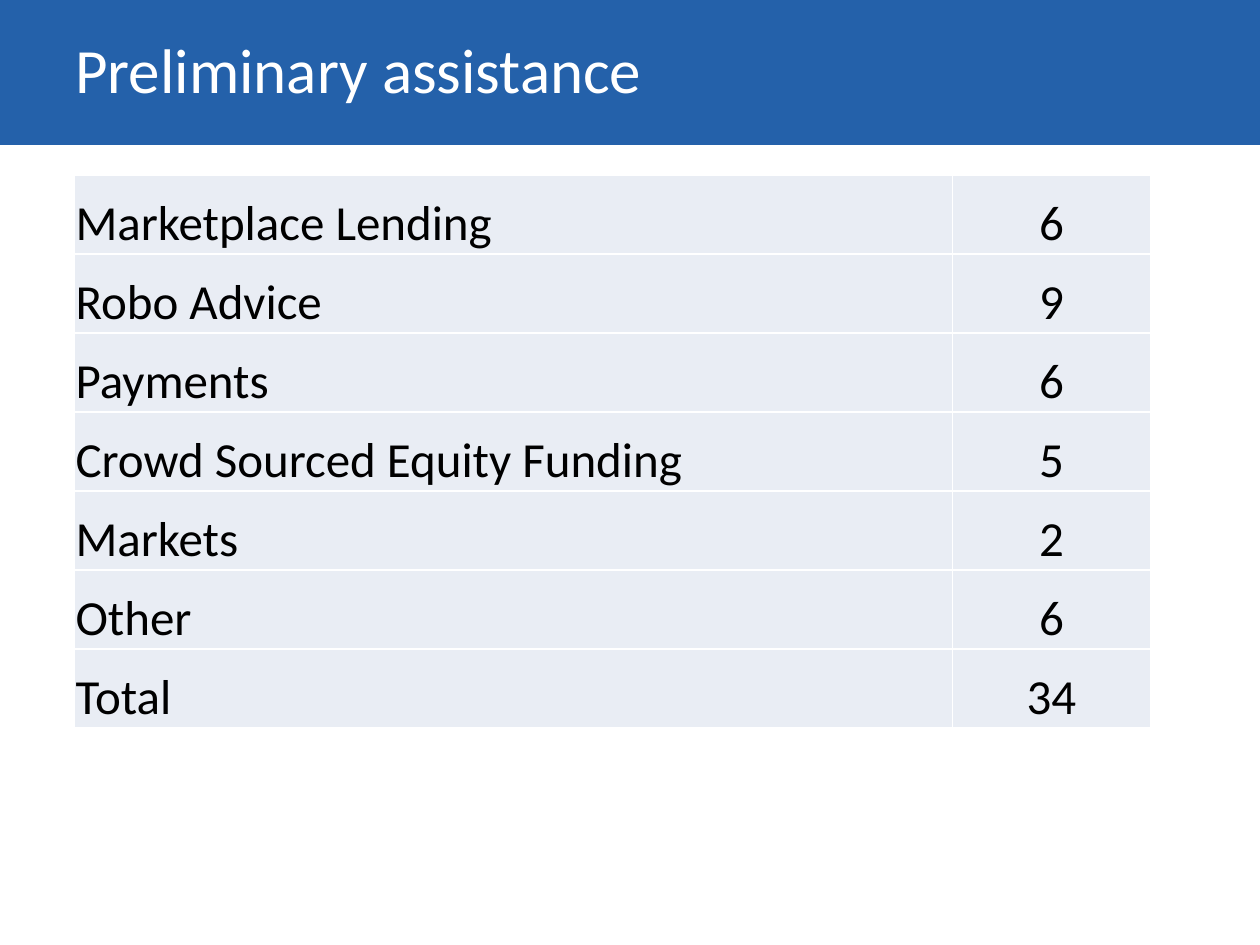
"""Build the preliminary assistance slide with its table of counts."""
from lxml import etree
from pptx import Presentation
from pptx.dml.color import RGBColor
from pptx.enum.shapes import MSO_SHAPE
from pptx.enum.text import MSO_ANCHOR, PP_ALIGN
from pptx.oxml.ns import qn
from pptx.util import Inches, Pt

BLUE = RGBColor(0x24, 0x61, 0xAA)
PALE = RGBColor(0xE9, 0xED, 0xF4)
WHITE = RGBColor(0xFF, 0xFF, 0xFF)
BLACK = RGBColor(0, 0, 0)
FONT = "Calibri"
ROW_H = Inches(4.39 / 7)
COL_W = [Inches(6.97), Inches(1.57)]
ROWS = [
    ("Marketplace Lending", 6),
    ("Robo Advice", 9),
    ("Payments", 6),
    ("Crowd Sourced Equity Funding", 5),
    ("Markets", 2),
    ("Other", 6),
    ("Total", 34),
]


def style_font(font, size, color):
    font.name, font.size, font.color.rgb = FONT, Pt(size), color


def add_borders(cell, color, width):
    tcPr = cell._tc.get_or_add_tcPr()
    for side in ("lnL", "lnR", "lnT", "lnB"):
        ln = etree.SubElement(tcPr, qn(f"a:{side}"), w=str(Pt(width)))
        fill = etree.SubElement(ln, qn("a:solidFill"))
        etree.SubElement(fill, qn("a:srgbClr"), val=str(color))


prs = Presentation()
prs.slide_width, prs.slide_height = Inches(10), Inches(7.5)
s = prs.slides.add_slide(prs.slide_layouts[6])

banner = s.shapes.add_shape(MSO_SHAPE.RECTANGLE, 0, 0, prs.slide_width, Inches(1.15))
banner.shadow.inherit = False
banner.fill.solid()
banner.fill.fore_color.rgb = BLUE
banner.line.fill.background()

title = s.shapes.add_textbox(Inches(0.5), 0, Inches(9), Inches(1.09))
tf = title.text_frame
tf.word_wrap = True
tf.vertical_anchor = MSO_ANCHOR.MIDDLE
tf.text = "Preliminary assistance"
style_font(tf.paragraphs[0].runs[0].font, 36, WHITE)

table = s.shapes.add_table(len(ROWS), len(COL_W), Inches(0.59), Inches(1.39),
                           sum(COL_W), ROW_H * len(ROWS)).table
table.first_row = table.horz_banding = False
for col, width in zip(table.columns, COL_W):
    col.width = width
for row, values in zip(table.rows, ROWS):
    row.height = ROW_H
    for cell, value, align in zip(row.cells, values, (PP_ALIGN.LEFT, PP_ALIGN.CENTER)):
        add_borders(cell, WHITE, 1)
        cell.fill.solid()
        cell.fill.fore_color.rgb = PALE
        cell.vertical_anchor = MSO_ANCHOR.BOTTOM
        cell.margin_left = cell.margin_right = cell.margin_top = Inches(0.01)
        cell.margin_bottom = 0
        p = cell.text_frame.paragraphs[0]
        p.text = str(value)
        p.alignment = align
        p.line_spacing = 1.15
        style_font(p.runs[0].font, 28, BLACK)

prs.save("out.pptx")
